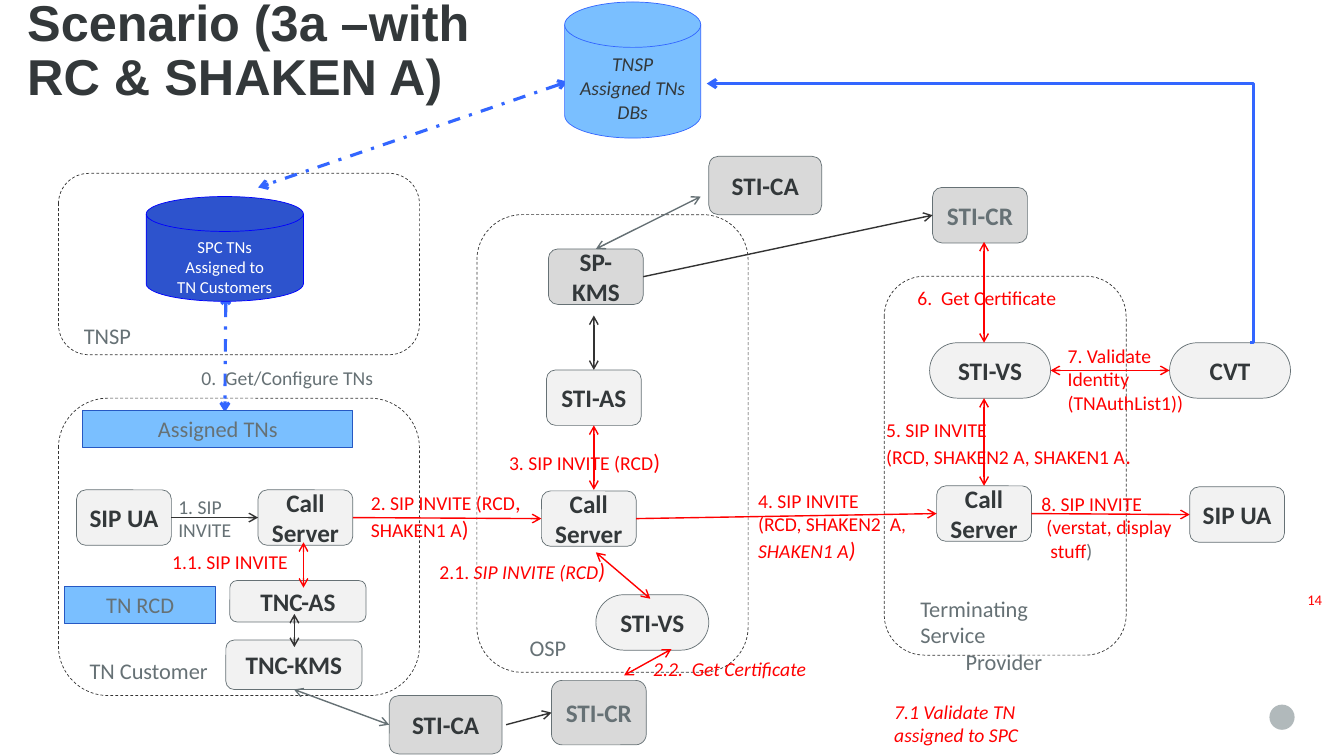
from lxml import etree
from pptx import Presentation
from pptx import util as u
from pptx.dml.color import RGBColor
from pptx.enum import dml, shapes, text
from pptx.oxml import ns

COLS, ROWS = 1333, 750
CELL = u.Inches(0.01)
HUE = {
    "ink": "33383A", "gray": "667175", "black": "333333", "red": "FF0000",
    "pale": "F2F2F2", "mid": "D9D9D9", "white": "FFFFFF", "dot": "B1B9BB",
    "sky": "7ABFFF", "edge": "2658C3", "blue": "3366FF", "navy": "2D53CD",
    "deep": "0000FF",
}
KIND = shapes.MSO_SHAPE
ROUND, DISK = KIND.ROUNDED_RECTANGLE, KIND.FLOWCHART_MAGNETIC_DISK
DASH = {"dash": dml.MSO_LINE.DASH, "dot": dml.MSO_LINE.DASH_DOT}

FRAMES = [
    (877, 274, 240, 376),
    (58, 395, 358, 295),
    (58, 172, 358, 180),
    (473, 213, 269, 454),
]

NODES = {
    "kms": ("SP-KMS", (544, 247, 94, 55), "mid", "ink"),
    "cr": ("STI-CR", (925, 186, 94, 55), "mid", "gray"),
    "as": ("STI-AS", (542, 367, 94, 55), "pale", "ink"),
    "ca": ("STI-CA", (703, 155, 112, 58), "mid", "ink"),
    "callee": ("SIP UA", (1180, 483, 94, 55), "pale", "ink"),
    "caller": ("SIP UA", (76, 486, 94, 55), "pale", "ink"),
    "osp": ("Call Server", (537, 487, 94, 55), "pale", "ink"),
    "cust": ("Call Server", (256, 486, 94, 55), "pale", "ink"),
    "term": ("Call Server", (929, 482, 94, 55), "pale", "ink"),
    "tncas": ("TNC-AS", (228, 576, 135, 41), "pale", "ink"),
    "tnckms": ("TNC-KMS", (224, 635, 135, 49), "pale", "ink"),
    "tncca": ("STI-CA", (386, 690, 112, 58), "mid", "ink"),
    "tnccr": ("STI-CR", (547, 675, 94, 64), "mid", "gray"),
    "vs": ("STI-VS", (922, 340, 120, 55), "pale", "ink"),
    "cvt": ("CVT", (1160, 340, 120, 55), "pale", "ink"),
    "ospvs": ("STI-VS", (591, 590, 112, 55), "pale", "ink"),
}
PILLS = {"vs", "cvt", "ospvs"}

STORES = [
    (DISK, (145, 195, 156, 104), "navy", "deep", 0.5,
     ["SPC TNs", "Assigned to", "TN Customers"], dict(size=12, hue="white")),
    (DISK, (560, 2, 135, 135), "sky", "blue", 0.5,
     ["TNSP Assigned TNs", "DBs"], dict(size=14, hue="ink", slant=True)),
    (KIND.RECTANGLE, (82, 407, 268, 37), "sky", "edge", 0.75,
     ["Assigned TNs"], dict(size=16, hue="gray")),
    (KIND.RECTANGLE, (64, 582, 150, 37), "sky", "edge", 0.75,
     ["TN RCD"], dict(size=16, hue="gray")),
]

UNDER = [
    ((224, 292), (223, 409), "blue", 2, "dot"),
    ((563, 81), (256, 186), "blue", 2, "dot"),
]
WIRES = [
    (("kms", 3), ("cr", 1), "black", 1),
    ((695, 195), ("kms", 0), "gray", 2),
    ((589, 313), ("as", 0), "black", 2),
    (("as", 2), (589, 486), "red", 2),
    ((976, 395), ("term", 0), "red", 2),
    ((976, 240), (976, 340), "red", 2),
    (("osp", 3), ("term", 1), "red", 1),
    (("cust", 3), ("osp", 1), "red", 1),
    (("caller", 3), ("cust", 1), "black", 1),
    (("term", 3), ("callee", 1), "red", 1),
    (("cvt", 1), ("vs", 3), "red", 2),
    (("tncca", 1), ("tnckms", 2), "gray", 2),
    ((502, 719), ("tnccr", 1), "black", 1),
    ((666, 644), (619, 670), "red", 2),
    ((591, 548), (645, 594), "red", 2),
    ((301, 538), (301, 583), "red", 2),
    ((292, 609), (292, 642), "black", 2),
]
BEND = ((1240, 340), (701, 83), "blue", 1)

BIG, SLANT = dict(size=16), dict(slant=True)
PLACE = dict(size=16, hue="gray")
MID = dict(PLACE, align="c")
NOTE = dict(size=14, hue="gray", wrap=False)
LABELS = [
    ((27, -3, 1041, 110), ["Scenario (3a –with\vRC & SHAKEN A)"],
     dict(size=36, hue="ink", bold=True, font="Arial", pad=0, lead=0.9, mid=True)),
    ((1280, 581, 48, 28), ["14"], dict(size=10.5, align="c", mid=True)),
    ((903, 585, 146, 41), ["Terminating Service", "Provider"],
     dict(PLACE, indent=[0, 45])),
    ((64, 647, 167, 37), ["TN Customer"], MID),
    ((460, 624, 167, 37), ["OSP"], MID),
    ((23, 315, 167, 37), ["TNSP"], MID),
    ((190, 358, 192, 34), ["0.  Get/Configure TNs"], NOTE),
    ((167, 486, 73, 57), ["1. SIP", "INVITE"], NOTE),
    ((161, 541, 231, 34), ["1.1. SIP INVITE"], {}),
    ((358, 479, 231, 64),
     [["2. SIP INVITE (RCD", (", ", BIG), "SHAKEN1 A", (")", BIG)]], {}),
    ((426, 548, 231, 37),
     [["2.1. ", ("SIP INVITE (RCD", SLANT), (")", dict(BIG, slant=True))]], {}),
    ((638, 647, 231, 34), ["2.2.  Get Certificate"], SLANT),
    ((495, 440, 231, 37), [["3. SIP INVITE (RCD", (")", BIG)]], {}),
    ((742, 480, 231, 84),
     ["4. SIP INVITE", "(RCD, SHAKEN2  A,",
      [("SHAKEN1 A", SLANT), (")", dict(BIG, slant=True))]], {}),
    ((869, 410, 300, 61),
     ["5. SIP INVITE", ["(RCD, SHAKEN2 A, SHAKEN1 A", (".", BIG)]], {}),
    ((900, 279, 231, 34), ["6.  Get Certificate"], {}),
    ((1049, 336, 231, 104), ["7. Validate", "Identity", "(TNAuthList1))"], {}),
    ((877, 689, 212, 57), ["7.1 Validate TN", "assigned to SPC"], SLANT),
    ((1023, 483, 151, 81),
     ["8. SIP INVITE", "(verstat, display", ["stuff", (")", dict(hue="gray"))]],
     dict(wrap=False, indent=[0, 5, 9])),
]


def tint(name):
    return RGBColor.from_string(HUE[name])


def span(box):
    return [int(n * CELL) for n in box]


def write(shape, paras, size=14, hue="red", bold=False, slant=False, font="Calibri",
          align="l", mid=False, wrap=True, pad=None, lead=None, indent=()):
    frame = shape.text_frame
    frame.word_wrap = wrap
    frame.vertical_anchor = text.MSO_ANCHOR.MIDDLE if mid else text.MSO_ANCHOR.TOP
    if pad is not None:
        frame.margin_left = frame.margin_right = pad
        frame.margin_top = frame.margin_bottom = pad
    base = dict(size=size, hue=hue, slant=slant)
    for i, runs in enumerate(paras):
        para = frame.paragraphs[0] if i == 0 else frame.add_paragraph()
        para.alignment = text.PP_ALIGN.CENTER if align == "c" else text.PP_ALIGN.LEFT
        if lead:
            para.line_spacing = lead
        if indent and indent[i]:
            para._p.get_or_add_pPr().set("marL", str(indent[i] * CELL))
        for item in [runs] if isinstance(runs, str) else runs:
            words, extra = (item, {}) if isinstance(item, str) else item
            look = {**base, **extra}
            for k, part in enumerate(words.split("\v")):
                if k:
                    para.add_line_break()
                run = para.add_run()
                run.text = part
                run.font.name, run.font.bold = font, bold
                run.font.size = u.Pt(look["size"])
                run.font.italic = look["slant"]
                run.font.color.rgb = tint(look["hue"])


def draw(page, kind, box, fill=None, edge=None, width=0.5, dash=None):
    shape = page.add_shape(kind, *span(box))
    shape.shadow.inherit = False
    if fill:
        shape.fill.solid()
        shape.fill.fore_color.rgb = tint(fill)
    else:
        shape.fill.background()
    if edge:
        shape.line.color.rgb = tint(edge)
        shape.line.width = u.Pt(width)
        shape.line.dash_style = DASH.get(dash)
    else:
        shape.line.fill.background()
    return shape


def wire(page, made, start, end, hue, heads, dash=None, bend=None):
    form = shapes.MSO_CONNECTOR.ELBOW if bend else shapes.MSO_CONNECTOR.STRAIGHT
    ends = [(0, 0) if isinstance(p[0], str) else p for p in (start, end)]
    line = page.add_connector(form, *span(ends[0] + ends[1]))
    for point, join in ((start, line.begin_connect), (end, line.end_connect)):
        if isinstance(point[0], str):
            join(made[point[0]], point[1])
    line.line.color.rgb = tint(hue)
    line.line.width = u.Pt(2.25 if hue == "blue" else 1)
    if dash:
        line.line.dash_style = DASH[dash]
    stroke = line.line._get_or_add_ln()
    for tag in ("a:headEnd", "a:tailEnd")[2 - heads:]:
        etree.SubElement(stroke, ns.qn(tag), type="arrow")
    props = line._element.spPr
    etree.SubElement(props, ns.qn("a:effectLst"))
    if bend:
        guides = props.find(ns.qn("a:prstGeom")).find(ns.qn("a:avLst"))
        etree.SubElement(guides, ns.qn("a:gd"), name="adj1", fmla=f"val {bend}")


def main():
    deck = Presentation()
    deck.slide_width, deck.slide_height = span((COLS, ROWS))
    page = deck.slides.add_slide(deck.slide_layouts[6]).shapes
    made = {}
    draw(page, KIND.OVAL, (1259, 699, 25, 25), "dot")
    for box in FRAMES:
        draw(page, ROUND, box, edge="black", dash="dash")
    for item in UNDER:
        wire(page, made, *item)
    for name, (label, box, fill, hue) in NODES.items():
        made[name] = draw(page, ROUND, box, fill, "gray")
        if name in PILLS:
            made[name].adjustments[0] = 0.5
        write(made[name], [label], size=18, hue=hue, bold=True, align="c", mid=True)
    for kind, box, fill, edge, width, paras, look in STORES:
        write(draw(page, kind, box, fill, edge, width), paras, align="c", **look)
    for item in WIRES:
        wire(page, made, *item)
    wire(page, made, *BEND, bend=-600)
    for box, paras, look in LABELS:
        write(page.add_textbox(*span(box)), paras, **look)
    deck.save("out.pptx")


if __name__ == "__main__":
    main()
